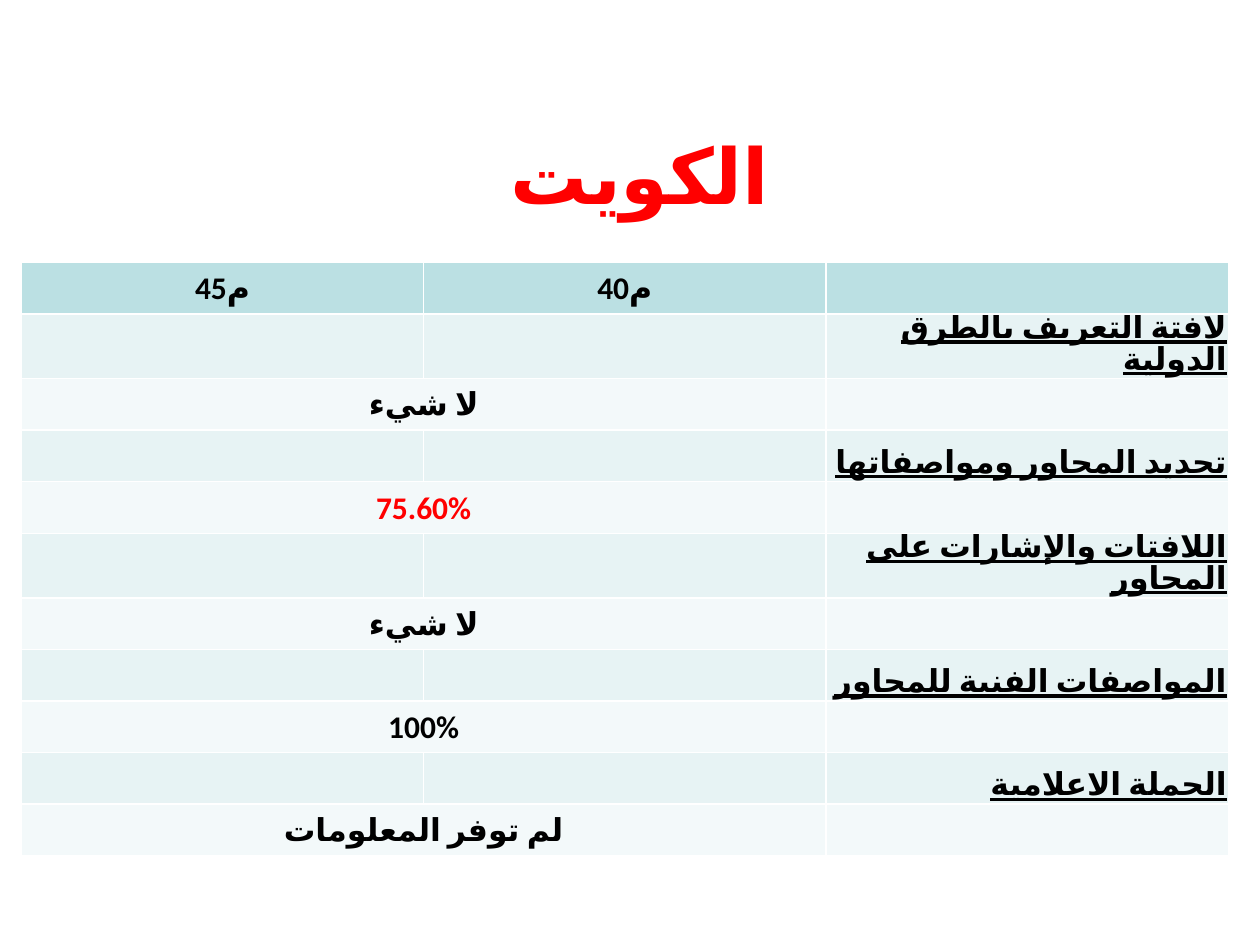
from lxml.etree import SubElement
from pptx import Presentation
from pptx.dml.color import RGBColor
from pptx.enum.lang import MSO_LANGUAGE_ID as Language
from pptx.enum.text import MSO_ANCHOR as Anchor, PP_ALIGN as Align
from pptx.oxml import parse_xml
from pptx.oxml.ns import nsdecls, qn
from pptx.util import Cm, Pt

HEADERS = ["م45", "م40"]
SECTIONS = [
    ("لافتة التعريف بالطرق الدولية", "لا شيء", "000000"),
    ("تحديد المحاور ومواصفاتها", "75.60%", "FF0000"),
    ("اللافتات والإشارات على المحاور", "لا شيء", "000000"),
    ("المواصفات الفنية للمحاور", "100%", "000000"),
    ("الحملة الاعلامية", "لم توفر المعلومات", "000000"),
]


def color(value):
    """Turn a hex string into a colour."""
    return RGBColor.from_string(value)


def write(frame, text, size, font="Calibri", ink="000000", align=Align.CENTER,
          underline=False, spacing=None):
    """Fill a text frame with one bold paragraph, right to left unless a percentage."""
    arabic = not text.endswith("%")
    paragraph = frame.paragraphs[0]
    paragraph.text = text
    paragraph.alignment = align
    paragraph.line_spacing = spacing
    if arabic:
        paragraph._p.get_or_add_pPr().set("rtl", "1")
    for run in paragraph.runs:
        run.font.size = Pt(size)
        run.font.bold = True
        run.font.underline = underline
        run.font.name = font
        run.font.color.rgb = color(ink)
        run.font.language_id = Language.ARABIC if arabic else Language.ENGLISH_US
        SubElement(run._r.get_or_add_rPr(), qn("a:cs"), typeface=font)


def style_cell(cell, fill, anchor=Anchor.MIDDLE):
    """Give a cell its fill, narrow margins and white borders."""
    cell.fill.solid()
    cell.fill.fore_color.rgb = color(fill)
    cell.vertical_anchor = anchor
    cell.margin_left = cell.margin_right = cell.margin_top = Cm(0.03)
    cell.margin_bottom = 0
    properties = cell._tc.get_or_add_tcPr()
    for index, side in enumerate(("lnL", "lnR", "lnT", "lnB")):
        properties.insert(index, parse_xml(
            f'<a:{side} {nsdecls("a")} w="12700"><a:solidFill>'
            f'<a:srgbClr val="FFFFFF"/></a:solidFill></a:{side}>'))


def add_title(slide, left, top, width, height):
    """Place the country name centred in the box."""
    frame = slide.shapes.add_textbox(left, top, width, height).text_frame
    frame.word_wrap = True
    frame.vertical_anchor = Anchor.MIDDLE
    write(frame, "الكويت", 44, "Arial", "FF0000")


def add_results(slide, left, top, width, height):
    """Place the table with a label row and a merged result row per section."""
    rows = 1 + 2 * len(SECTIONS)
    table = slide.shapes.add_table(rows, 3, left, top, width, height).table
    table.first_row = table.horz_banding = False
    for index in range(rows):
        fill = "BBE0E3" if index == 0 else "E7F3F4" if index % 2 else "F3F9FA"
        for column in range(3):
            anchor = Anchor.BOTTOM if index and column == 2 else Anchor.MIDDLE
            style_cell(table.cell(index, column), fill, anchor)
    for column, header in enumerate(HEADERS):
        write(table.cell(0, column).text_frame, header, 18)
    for index, (label, result, ink) in enumerate(SECTIONS):
        row = 1 + 2 * index
        write(table.cell(row, 2).text_frame, label, 18, align=Align.RIGHT,
              underline=True, spacing=Pt(18))
        cell = table.cell(row + 1, 0)
        cell.merge(table.cell(row + 1, 1))
        write(cell.text_frame, result, 18, ink=ink)


def main():
    """Build and save the slide."""
    presentation = Presentation()
    presentation.slide_width, presentation.slide_height = Cm(25.4), Cm(19.05)
    slide = presentation.slides.add_slide(presentation.slide_layouts[6])
    add_title(slide, Cm(1.47), Cm(2.34), Cm(22.86), Cm(2.34))
    add_results(slide, Cm(0.43), Cm(5.29), Cm(24.33), Cm(11.44))
    presentation.save("out.pptx")


if __name__ == "__main__":
    main()
